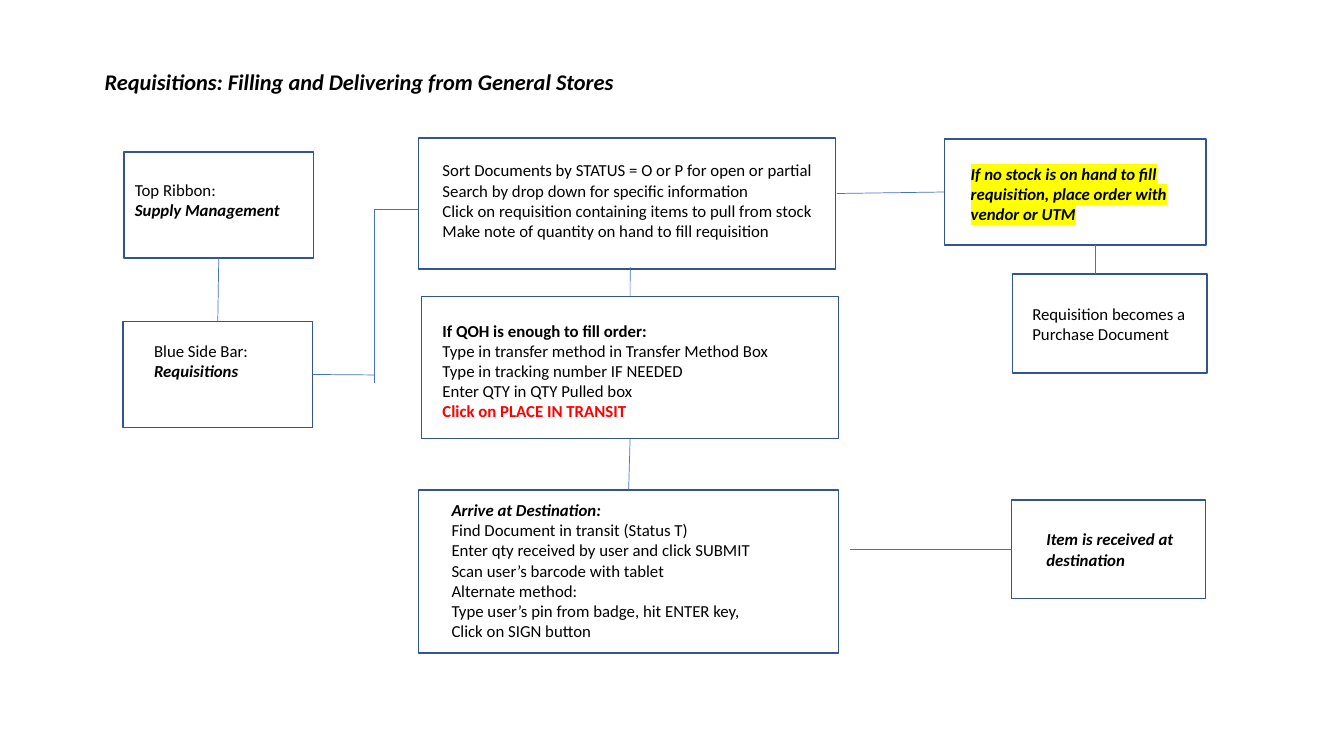
from lxml import etree
from pptx import Presentation
from pptx.dml.color import RGBColor
from pptx.enum.shapes import MSO_CONNECTOR as Connector, MSO_SHAPE as Shape
from pptx.enum.text import MSO_AUTO_SIZE as AutoSize
from pptx.oxml.ns import qn
from pptx.util import Inches, Pt

BLACK = RGBColor(0x00, 0x00, 0x00)
RED = RGBColor(0xFF, 0x00, 0x00)
YELLOW = RGBColor(0xFF, 0xFF, 0x00)
BORDER = RGBColor(0x32, 0x54, 0x91)
LINK = RGBColor(0x44, 0x72, 0xC4)

FONT = "Calibri"
TOP, LEFT, BOTTOM, RIGHT = range(4)
PLAIN = {}
BOLD = {"bold": True}
BOLD_ITALIC = {"bold": True, "italic": True}

# Step boxes: left, top, width, height
BOXES = {
    "ribbon": (1.23, 1.51, 1.88, 1.05),
    "side_bar": (1.22, 3.19, 1.88, 1.05),
    "sort": (4.15, 1.37, 4.14, 1.3),
    "fill_order": (4.18, 2.94, 4.14, 1.41),
    "arrive": (4.15, 4.86, 4.17, 1.62),
    "no_stock": (9.37, 1.38, 2.59, 1.05),
    "purchase": (10.04, 2.72, 1.93, 0.98),
    "received": (10.03, 4.96, 1.93, 0.98),
}

# Links: start point, end point, joined start and joined end (box, side)
LINKS = [
    ((2.17, 2.56), (2.16, 3.19), ("ribbon", BOTTOM), ("side_bar", TOP)),
    ((3.1, 3.72), (3.71, 3.72), ("side_bar", RIGHT), None),
    ((3.71, 2.08), (3.71, 3.8), None, None),
    ((3.71, 2.08), (4.15, 2.08), None, None),
    ((6.25, 2.65), (6.25, 2.94), None, ("fill_order", TOP)),
    ((6.25, 4.35), (6.25, 4.86), ("fill_order", BOTTOM), ("arrive", TOP)),
    ((8.3, 1.92), (9.36, 1.92), None, ("no_stock", LEFT)),
    ((10.86, 2.43), (10.86, 2.72), None, None),
    ((8.43, 5.45), (10.03, 5.45), None, ("received", LEFT)),
]

# Texts: left, top, width, height, wrap, paragraphs with their format
TEXTS = [
    (1.24, 1.73, 1.66, 0.5, False, [
        ("Top Ribbon:", PLAIN),
        ("Supply Management", BOLD_ITALIC)]),
    (1.43, 3.33, 1.14, 0.5, False, [
        ("Blue Side Bar:", PLAIN),
        ("Requisitions", BOLD_ITALIC)]),
    (4.29, 1.54, 3.91, 0.91, False, [
        ("Sort Documents by STATUS = O or P for open or partial", PLAIN),
        ("Search by drop down for specific information", PLAIN),
        ("Click on requisition containing items to pull from stock", PLAIN),
        ("Make note of quantity on hand to fill requisition", PLAIN)]),
    (4.29, 3.13, 3.91, 1.11, True, [
        ("If QOH is enough to fill order:", BOLD),
        ("Type in transfer method in Transfer Method Box", PLAIN),
        ("Type in tracking number IF NEEDED", PLAIN),
        ("Enter QTY in QTY Pulled box", PLAIN),
        ("Click on PLACE IN TRANSIT", {"bold": True, "color": RED})]),
    (4.38, 4.91, 3.19, 1.51, False, [
        ("Arrive at Destination:", BOLD_ITALIC),
        ("Find Document in transit (Status T)", PLAIN),
        ("Enter qty received by user and click SUBMIT", PLAIN),
        ("Scan user’s barcode with tablet", PLAIN),
        ("Alternate method:", PLAIN),
        ("Type user’s pin from badge, hit ENTER key,", PLAIN),
        ("Click on SIGN button", PLAIN)]),
    (9.53, 1.57, 2.34, 0.71, True, [
        ("If no stock is on hand to fill requisition, place order with "
         "vendor or UTM", {**BOLD_ITALIC, "highlight": YELLOW})]),
    (10.14, 2.96, 1.77, 0.5, True, [
        ("Requisition becomes a Purchase Document", PLAIN)]),
    (10.28, 5.2, 1.46, 0.5, True, [
        ("Item is received at destination", BOLD_ITALIC)]),
]


def add_box(slide, left, top, width, height):
    shape = slide.shapes.add_shape(
        Shape.RECTANGLE, Inches(left), Inches(top), Inches(width), Inches(height))
    shape.shadow.inherit = False
    shape.fill.background()
    shape.line.color.rgb = BORDER
    shape.line.width = Pt(1)
    return shape


def add_link(slide, boxes, start, end, start_joint, end_joint):
    connector = slide.shapes.add_connector(
        Connector.STRAIGHT, *(Inches(value) for value in start + end))
    connector.line.color.rgb = LINK
    connector.line.width = Pt(0.5)
    etree.SubElement(connector._element.spPr, qn("a:effectLst"))
    if start_joint:
        name, side = start_joint
        connector.begin_connect(boxes[name], side)
    if end_joint:
        name, side = end_joint
        connector.end_connect(boxes[name], side)


def format_run(run, size=12, color=BLACK, highlight=None, **styles):
    font = run.font
    values = {"name": FONT, "size": Pt(size), **styles}
    for attribute, value in values.items():
        setattr(font, attribute, value)
    font.color.rgb = color
    if highlight:
        properties = run._r.get_or_add_rPr()
        mark = etree.Element(qn("a:highlight"))
        etree.SubElement(mark, qn("a:srgbClr"), val=str(highlight))
        properties.find(qn("a:solidFill")).addnext(mark)


def add_text(slide, left, top, width, height, wrap, paragraphs):
    shape = slide.shapes.add_textbox(
        Inches(left), Inches(top), Inches(width), Inches(height))
    frame = shape.text_frame
    frame.word_wrap = wrap
    frame.auto_size = AutoSize.SHAPE_TO_FIT_TEXT
    for index, (text, styles) in enumerate(paragraphs):
        paragraph = frame.add_paragraph() if index else frame.paragraphs[0]
        run = paragraph.add_run()
        run.text = text
        format_run(run, **styles)


def main():
    presentation = Presentation()
    presentation.slide_width = Inches(13.33)
    presentation.slide_height = Inches(7.5)
    slide = presentation.slides.add_slide(presentation.slide_layouts[6])

    # Title
    add_text(slide, 0.94, 0.63, 5.32, 0.37, False, [
        ("Requisitions: Filling and Delivering from General Stores",
         {**BOLD_ITALIC, "size": 16})])

    # Flow chart
    boxes = {name: add_box(slide, *place) for name, place in BOXES.items()}
    for link in LINKS:
        add_link(slide, boxes, *link)
    for text in TEXTS:
        add_text(slide, *text)

    presentation.save("out.pptx")


if __name__ == "__main__":
    main()
